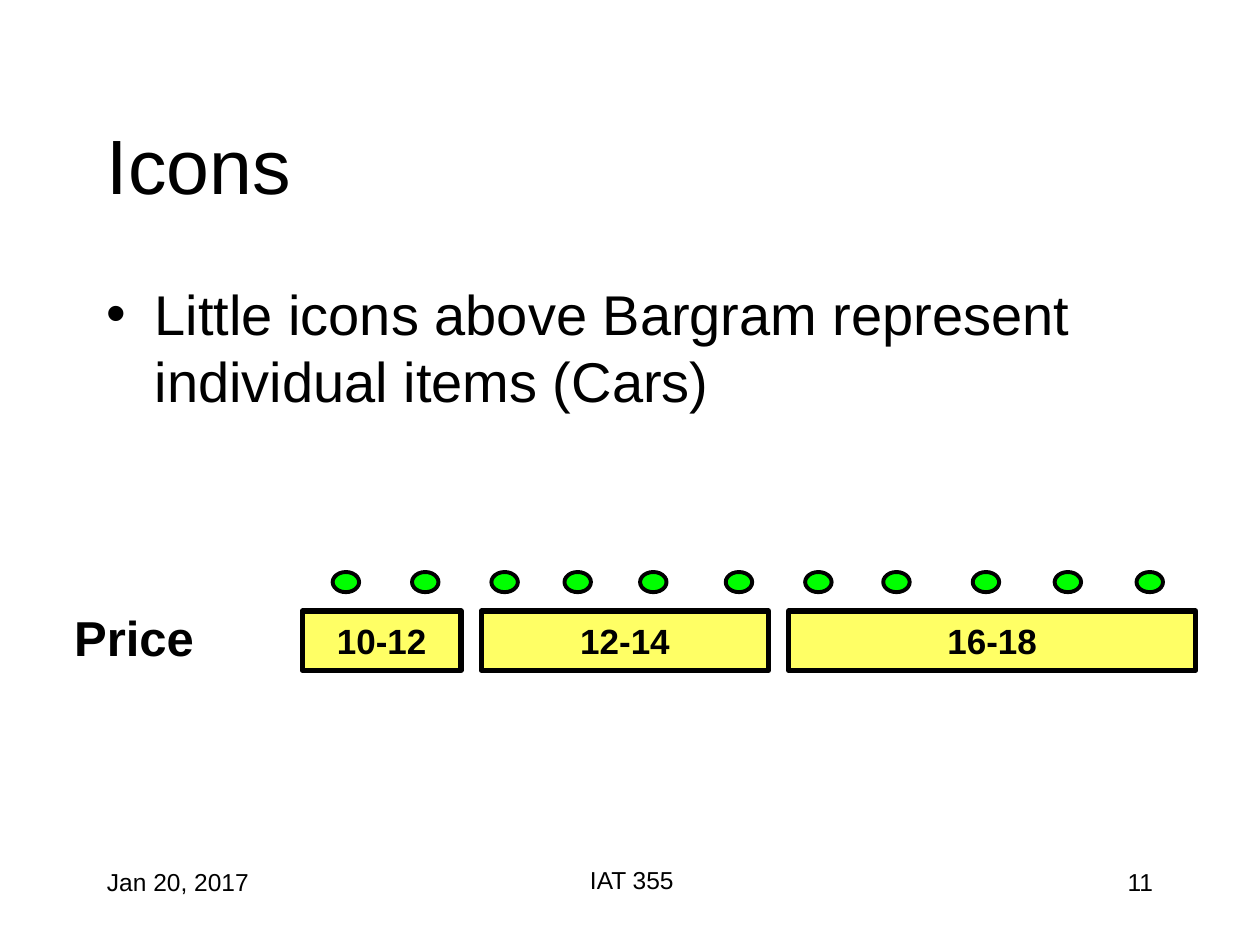
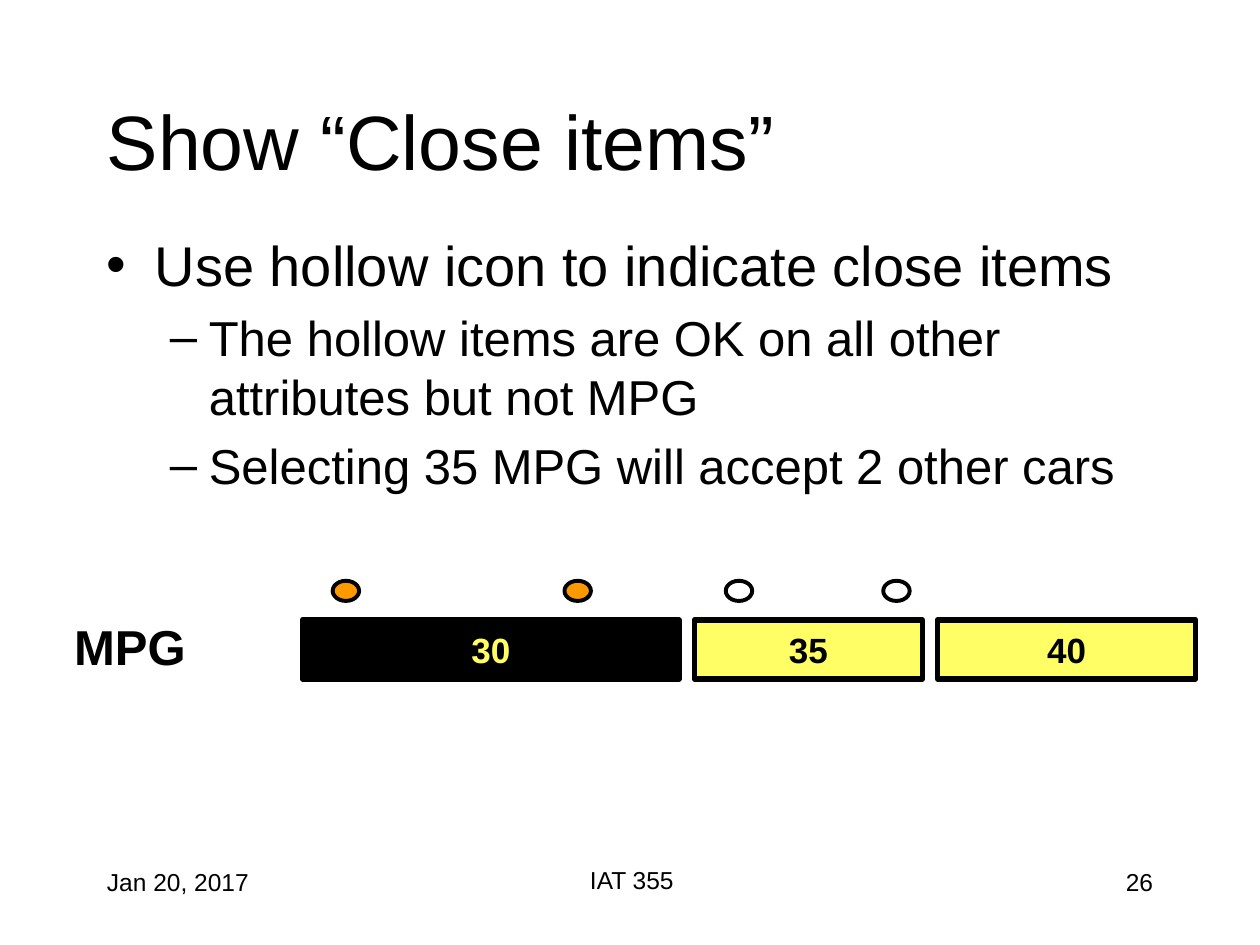
from dataclasses import dataclass
from lxml.etree import SubElement
from pptx import Presentation
from pptx.dml.color import RGBColor
from pptx.enum.shapes import MSO_SHAPE as Preset
from pptx.enum.text import MSO_ANCHOR as Anchor, MSO_AUTO_SIZE as AutoSize, PP_ALIGN as Align
from pptx.oxml.ns import qn
from pptx.util import Inches, Pt


@dataclass(frozen=True)
class Theme:
    font: str = "Arial"
    ink: str = "000000"
    bar: str = "FFFF65"
    item: str = "00FF00"
    match: str = "FF9900"
    title_size: int = 44
    bullet_sizes: tuple = (32, 28)
    label_size: int = 28
    bar_size: int = 20
    footer_size: int = 14
    bar_line: float = 3
    icon_line: float = 2.25


THEME = Theme()
WIDTH, HEIGHT = 10, 7.5
MARGIN = 0.75
CONTENT_WIDTH = WIDTH - 2 * MARGIN
TITLE_TOP, BODY_BOTTOM = 0.67, 6.67
LABEL_LEFT, LABEL_RISE = 0.49, 0.08
BAR_LEFT, BAR_RIGHT, BAR_HEIGHT = 2.4, 9.49, 0.47
ICON_WIDTH, ICON_HEIGHT, ICON_RISE = 0.21, 0.16, 0.31
CAR_LEFTS = (2.64, 3.27, 3.9, 4.48, 5.08, 5.76, 6.39, 7.01, 7.72, 8.37, 9.02)
BULLETS = (("•", 0.38, 0.38), ("–", 0.81, 0.31))
FOOTER_SLOTS = (
    (MARGIN, 6.83, 2.08, Align.LEFT),
    (3.43, 6.82, 3.17, Align.CENTER),
    (7.17, 6.83, 2.08, Align.RIGHT),
)
DATE, COURSE = "Jan 20, 2017", "IAT 355"

SLIDES = [
    {
        "title": "Icons", "title_height": 1.25, "body_top": 2.17, "number": "11",
        "bullets": [(0, "Little icons above Bargram represent individual items (Cars)")],
        "label": ("Price", 1.15), "bar_top": 4.85, "gap": 0.16,
        "bars": [("10-12", 1.26), ("12-14", 2.28), ("16-18", 3.23)],
        "selected": None,
        "icons": {car: THEME.item for car in range(len(CAR_LEFTS))},
    },
    {
        "title": "Show “Close items”", "title_height": 0.88, "body_top": 1.78, "number": "26",
        "bullets": [
            (0, "Use hollow icon to indicate close items"),
            (1, "The hollow items are OK on all other attributes but not MPG"),
            (1, "Selecting 35 MPG will accept 2 other cars"),
        ],
        "label": ("MPG", 1.09), "bar_top": 4.92, "gap": 0.12,
        "bars": [("30", 2.99), ("35", 1.81), ("40", 2.05)],
        "selected": "30",
        "icons": {0: THEME.match, 3: THEME.match, 5: None, 7: None},
    },
]


def add_run(paragraph, text, size, color=THEME.ink, bold=False):
    run = paragraph.add_run()
    run.text = text
    run.font.name = THEME.font
    run.font.size = Pt(size)
    run.font.bold = bold
    run.font.color.rgb = RGBColor.from_string(color)


def add_box(slide, left, top, width, height, wrap=True, anchor=Anchor.TOP):
    shape = slide.shapes.add_textbox(*map(Inches, (left, top, width, height)))
    shape.text_frame.word_wrap = wrap
    shape.text_frame.vertical_anchor = anchor
    return shape.text_frame


def add_outlined(slide, preset, box, fill, line_width):
    shape = slide.shapes.add_shape(preset, *map(Inches, box))
    shape.shadow.inherit = False
    if fill:
        shape.fill.solid()
        shape.fill.fore_color.rgb = RGBColor.from_string(fill)
    else:
        shape.fill.background()
    shape.line.color.rgb = RGBColor.from_string(THEME.ink)
    shape.line.width = Pt(line_width)
    return shape


def set_bullet(paragraph, level):
    mark, margin, hanging = BULLETS[level]
    paragraph.level = level
    properties = paragraph._p.get_or_add_pPr()
    properties.set("marL", str(Inches(margin)))
    properties.set("indent", str(-Inches(hanging)))
    spacing = SubElement(properties, qn("a:spcBef"))
    SubElement(spacing, qn("a:spcPct")).set("val", "20000")
    SubElement(properties, qn("a:buFont")).set("typeface", THEME.font)
    SubElement(properties, qn("a:buChar")).set("char", mark)


def add_footer(slide, number):
    for text, (left, top, width, align) in zip((DATE, COURSE, number), FOOTER_SLOTS):
        paragraph = add_box(slide, left, top, width, 0.5).paragraphs[0]
        paragraph.alignment = align
        add_run(paragraph, text, THEME.footer_size)


def add_text(slide, content):
    title = add_box(slide, MARGIN, TITLE_TOP, CONTENT_WIDTH, content["title_height"], anchor=Anchor.MIDDLE)
    add_run(title.paragraphs[0], content["title"], THEME.title_size)
    top = content["body_top"]
    body = add_box(slide, MARGIN, top, CONTENT_WIDTH, BODY_BOTTOM - top)
    for index, (level, text) in enumerate(content["bullets"]):
        paragraph = body.add_paragraph() if index else body.paragraphs[0]
        set_bullet(paragraph, level)
        add_run(paragraph, text, THEME.bullet_sizes[level])


def add_bargram(slide, content):
    top = content["bar_top"]
    text, width = content["label"]
    label = add_box(slide, LABEL_LEFT, top - LABEL_RISE, width, 0.57, wrap=False)
    label.auto_size = AutoSize.SHAPE_TO_FIT_TEXT
    add_run(label.paragraphs[0], text, THEME.label_size, bold=True)

    bars = content["bars"]
    free_width = BAR_RIGHT - BAR_LEFT - content["gap"] * (len(bars) - 1)
    scale = free_width / sum(share for _, share in bars)
    left = BAR_LEFT
    for text, share in bars:
        fill, color = THEME.bar, THEME.ink
        if text == content["selected"]:
            fill, color = color, fill
        width = share * scale
        bar = add_outlined(slide, Preset.RECTANGLE, (left, top, width, BAR_HEIGHT), fill, THEME.bar_line)
        bar.text_frame.word_wrap = False
        bar.text_frame.vertical_anchor = Anchor.MIDDLE
        paragraph = bar.text_frame.paragraphs[0]
        paragraph.alignment = Align.CENTER
        add_run(paragraph, text, THEME.bar_size, color, bold=True)
        left += width + content["gap"]

    for car, fill in content["icons"].items():
        box = (CAR_LEFTS[car], top - ICON_RISE, ICON_WIDTH, ICON_HEIGHT)
        add_outlined(slide, Preset.OVAL, box, fill, THEME.icon_line)


def main():
    presentation = Presentation()
    presentation.slide_width, presentation.slide_height = Inches(WIDTH), Inches(HEIGHT)
    for content in SLIDES:
        slide = presentation.slides.add_slide(presentation.slide_layouts[6])
        add_footer(slide, content["number"])
        add_text(slide, content)
        add_bargram(slide, content)
    presentation.save("out.pptx")


if __name__ == "__main__":
    main()
